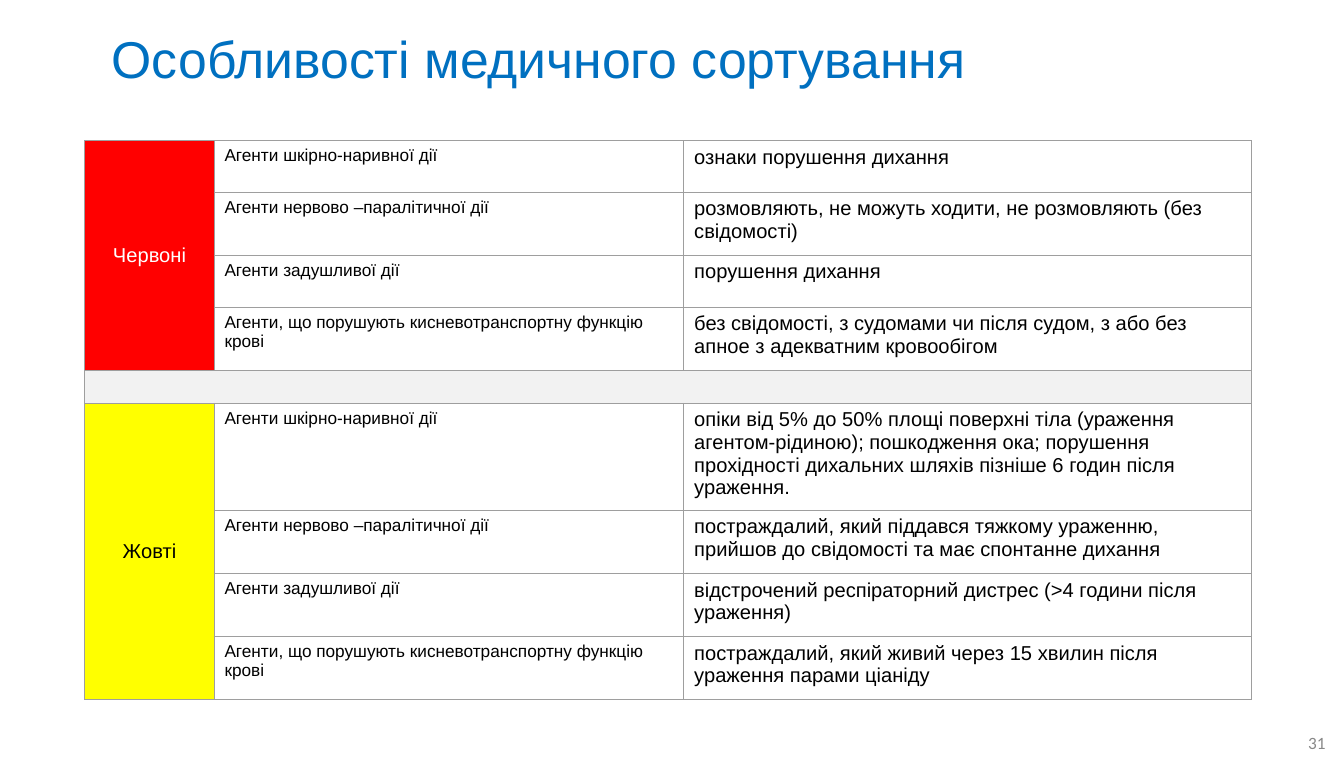
from lxml import etree
from pptx import Presentation
from pptx.dml.color import RGBColor
from pptx.enum.text import MSO_ANCHOR, PP_ALIGN
from pptx.oxml.ns import qn
from pptx.util import Inches, Pt

TOP, MIDDLE = MSO_ANCHOR.TOP, MSO_ANCHOR.MIDDLE
LEFT, CENTER, RIGHT, JUSTIFY = (
    PP_ALIGN.LEFT, PP_ALIGN.CENTER, PP_ALIGN.RIGHT, PP_ALIGN.JUSTIFY)
TITLE_ONLY = 5

COLORS = {
    "title": "0070C0", "number": "888888", "border": "9E9E9E",
    "black": "000000", "white": "FFFFFF",
    "red": "FF0000", "yellow": "FFFF00", "spacer": "F2F2F2",
}
COLUMN_WIDTHS = [1.25, 4.54, 5.49]
ROW_HEIGHTS = [0.5, 0.61, 0.5, 0.61, 0.32, 0.98, 0.61, 0.61, 0.61]
SPACER_ROW = 4

AGENTS = [
    "Агенти шкірно-наривної дії",
    "Агенти нервово –паралітичної дії",
    "Агенти задушливої дії",
    "Агенти, що порушують кисневотранспортну функцію крові",
]
# First row, label, fill, label colour, signs for each agent
TRIAGE_GROUPS = [
    (0, "Червоні", "red", "white", [
        "ознаки порушення дихання",
        "розмовляють, не можуть ходити, не розмовляють (без свідомості)",
        "порушення дихання",
        "без свідомості, з судомами чи після судом, з або без апное "
        "з адекватним кровообігом",
    ]),
    (5, "Жовті", "yellow", "black", [
        "опіки від 5% до 50% площі поверхні тіла (ураження агентом-рідиною); "
        "пошкодження ока; порушення прохідності дихальних шляхів пізніше "
        "6 годин після ураження.",
        "постраждалий, який піддався тяжкому ураженню, прийшов до свідомості "
        "та має спонтанне дихання",
        "відстрочений респіраторний дистрес (>4 години після ураження)",
        "постраждалий, який живий через 15 хвилин після ураження парами ціаніду",
    ]),
]


def rgb(name):
    return RGBColor.from_string(COLORS[name])


def write(frame, text, size, color, align=LEFT, font_name="Arial"):
    paragraph = frame.paragraphs[0]
    paragraph.alignment = align
    run = paragraph.add_run()
    run.text = text
    for attribute, value in {"name": font_name, "size": Pt(size)}.items():
        setattr(run.font, attribute, value)
    run.font.color.rgb = rgb(color)


def place(shape, left, top, width, height):
    box = {"left": left, "top": top, "width": width, "height": height}
    for attribute, value in box.items():
        setattr(shape, attribute, Inches(value))


def add_title(slide):
    title = slide.shapes.title
    place(title, 0.98, 0.19, 11.39, 0.74)
    title.text_frame.vertical_anchor = MIDDLE
    write(title.text_frame, "Особливості медичного сортування", 36, "title", JUSTIFY)


def add_slide_number(slide):
    number = slide.shapes.add_textbox(
        Inches(12.32), Inches(6.98), Inches(0.59), Inches(0.39))
    number.text_frame.word_wrap = True
    number.text_frame.vertical_anchor = MIDDLE
    write(number.text_frame, "31", 12, "number", RIGHT, "Calibri")


def set_borders(cell):
    properties = cell._tc.get_or_add_tcPr()
    for side in ("lnL", "lnR", "lnT", "lnB"):
        line = etree.SubElement(properties, qn(f"a:{side}"), w=str(Pt(0.75)))
        fill = etree.SubElement(line, qn("a:solidFill"))
        etree.SubElement(fill, qn("a:srgbClr"), val=COLORS["border"])


def set_fill(cell, color):
    cell.fill.solid()
    cell.fill.fore_color.rgb = rgb(color)


def add_triage_table(slide):
    table = slide.shapes.add_table(
        len(ROW_HEIGHTS), len(COLUMN_WIDTHS), Inches(0.82), Inches(1.36),
        Inches(sum(COLUMN_WIDTHS)), Inches(sum(ROW_HEIGHTS))).table
    table.first_row = table.horz_banding = False
    for column, width in zip(table.columns, COLUMN_WIDTHS):
        column.width = Inches(width)
    for row, height in zip(table.rows, ROW_HEIGHTS):
        row.height = Inches(height)
    for cell in table.iter_cells():
        set_borders(cell)
        set_fill(cell, "white")
        cell.vertical_anchor = TOP

    for first, label, fill, label_color, signs in TRIAGE_GROUPS:
        category = table.cell(first, 0)
        category.merge(table.cell(first + len(AGENTS) - 1, 0))
        set_fill(category, fill)
        category.vertical_anchor = MIDDLE
        write(category.text_frame, label, 14, label_color, CENTER)
        for row, (agent, sign) in enumerate(zip(AGENTS, signs), first):
            write(table.cell(row, 1).text_frame, agent, 12, "black")
            write(table.cell(row, 2).text_frame, sign, 14, "black")

    for cell in table.rows[SPACER_ROW].cells:
        cell.margin_top = cell.margin_bottom = 0
        set_fill(cell, "spacer")
    table.cell(SPACER_ROW, 0).merge(table.cell(SPACER_ROW, len(COLUMN_WIDTHS) - 1))


def main():
    presentation = Presentation()
    presentation.slide_width = Inches(12.99)
    presentation.slide_height = Inches(7.5)
    slide = presentation.slides.add_slide(presentation.slide_layouts[TITLE_ONLY])
    add_slide_number(slide)
    add_title(slide)
    add_triage_table(slide)
    presentation.save("out.pptx")


if __name__ == "__main__":
    main()
